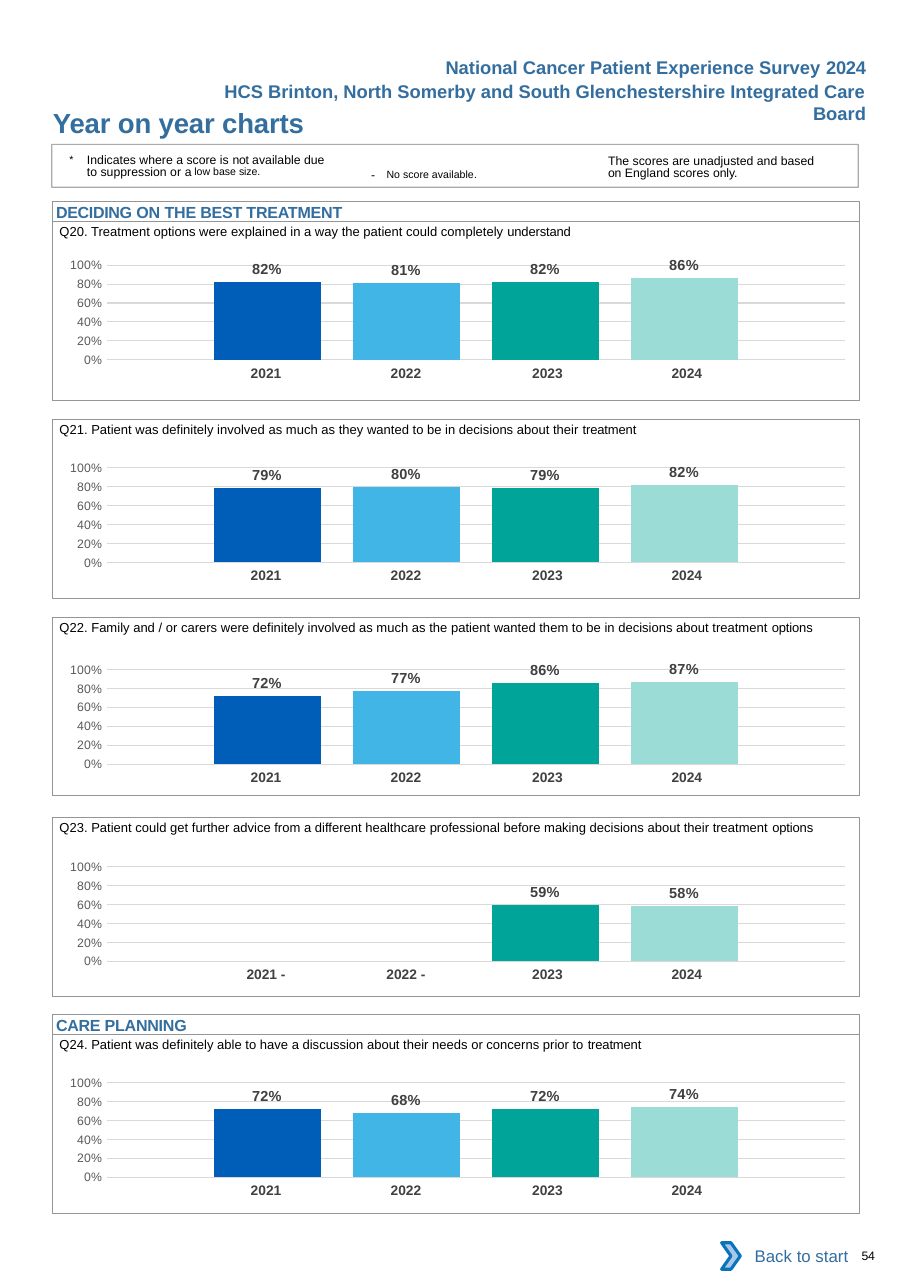
import pptx
import pptx.util
import pptx.chart.data
import pptx.dml.color
import pptx.enum.chart
import pptx.enum.shapes
import pptx.enum.text
import pptx.oxml
import pptx.oxml.ns
from pptx.util import Inches, Pt

# Content: frame top, chart top, question, its last word, scores
YEARS = (2021, 2022, 2023, 2024)
CHARTS = [
    (2.01, 2.22, "Q20. Treatment options were explained in a way the patient could completely ",
     "understand", (0.82, 0.81, 0.82, 0.86)),
    (3.81, 4.06, "Q21. Patient was definitely involved as much as they wanted to be in decisions about their ",
     "treatment", (0.79, 0.8, 0.79, 0.82)),
    (5.6, 5.89, "Q22. Family and / or carers were definitely involved as much as the patient wanted them "
     "to be in decisions about treatment ", "options", (0.72, 0.77, 0.86, 0.87)),
    (7.42, 7.68, "Q23. Patient could get further advice from a different healthcare professional before "
     "making decisions about their treatment ", "options", (None, None, 0.59, 0.58)),
    (9.39, 9.64, "Q24. Patient was definitely able to have a discussion about their needs or concerns prior to ",
     "treatment", (0.72, 0.68, 0.72, 0.74)),
]
# Runs: text, size, letter spacing, raised by percent
HEADS = [
    (1.83, [("DECIDING ", 10.5, -0.2), ("ON ", 10.5), ("THE BEST TREATMENT", 10.5, -0.1)]),
    (9.21, [("CARE ", 10.5, -0.2), ("PLANNING", 10.5, -0.1)]),
]
TITLE = [("Year on year charts", 18, -0.1)]
SURVEY = [("National Cancer Patient Experience Survey ", 12), ("2024", 12, -0.2)]
BOARD = [("HCS Brinton, North Somerby and South Glenchestershire Integrated Care Board", 12)]
STAR = [("*\t", 12, 0, 3), ("Indicates where a score is ", 8), ("not ", 8, -0.2),
        ("available due to suppression or ", 8), ("a ", 8, -0.5),
        ("low base", 12, 0, 7), (" size.", 12, -0.1, 7)]
DASH = [("- ", 8, 2.6), ("No score available", 12, 0, 3), (".", 12, -0.1, 3)]
SCORES = [("The scores are unadjusted and based", 8), (" on", 8, -0.2),
          (" England scores ", 8), ("only.", 8, -0.1)]

COLORS = {"head": "336E9F", "text": "000000", "frame": "939598", "year": "414042",
          "label": "404040", "axis": "595959", "grid": "D9D9D9", "white": "FFFFFF",
          "arrow": "A8C7E9", "edge": "0A74BB"}
BARS = ("005EB8", "41B6E6", "00A499", "9CDCD7")
LEFT, WIDE, TALL = 0.48, 7.32, 1.62
COLS = (1.27, 1.27, 1.34, 1.27)
PADS = (0, 0, 0.04, 0.12)
PLAIN = "{2D5ABB26-0587-4C30-8999-92F81FD0307C}"

ALIGN = pptx.enum.text.PP_ALIGN
ANCHOR = pptx.enum.text.MSO_ANCHOR
SHAPE = pptx.enum.shapes.MSO_SHAPE
XL = pptx.enum.chart


def rgb(name):
    return pptx.dml.color.RGBColor.from_string(COLORS.get(name, name))


def style(font, size, color, bold=False):
    font.name, font.size, font.bold = "Arial", Pt(size), bold
    font.color.rgb = rgb(color)


def write(frame, runs, color="text", bold=False, align=ALIGN.LEFT, pad=(0, 0, 0, 0),
          before=0, indent=0, hang=0, line=None, anchor=ANCHOR.TOP):
    frame.word_wrap = True
    frame.auto_size = pptx.enum.text.MSO_AUTO_SIZE.NONE
    frame.vertical_anchor = anchor
    (frame.margin_left, frame.margin_top,
     frame.margin_right, frame.margin_bottom) = map(Inches, pad)
    para = frame.paragraphs[0]
    para.alignment, para.space_before = align, Pt(before)
    if line:
        para.line_spacing = Pt(line)
    props = para._p.get_or_add_pPr()
    props.set("marL", str(Inches(indent)))
    props.set("indent", str(Inches(-hang)))
    for text, size, *more in runs:
        space, lift = (more + [0, 0])[:2]
        run = para.add_run()
        run.text = text
        style(run.font, size, color, bold)
        attrs = run._r.get_or_add_rPr()
        if space:
            attrs.set("spc", str(round(space * 100)))
        if lift:
            attrs.set("baseline", str(lift * 1000))


def label(box, runs, **how):
    write(slide.shapes.add_textbox(*map(Inches, box)).text_frame, runs, **how)


def block(kind, box, fill=None, line=None, width=0.5):
    shape = slide.shapes.add_shape(kind, *map(Inches, box))
    shape.shadow.inherit = False
    if fill:
        shape.fill.solid()
        shape.fill.fore_color.rgb = rgb(fill)
    else:
        shape.fill.background()
    if line:
        shape.line.color.rgb = rgb(line)
        shape.line.width = Pt(width)
    else:
        shape.line.fill.background()
    return shape


def draw_chart(top, vals):
    data = pptx.chart.data.CategoryChartData(number_format="0%")
    data.categories = ["1"]
    for n, val in enumerate(vals, 1):
        data.add_series(f"Series {n}", [val])
    chart = slide.shapes.add_chart(XL.XL_CHART_TYPE.COLUMN_CLUSTERED,
                                   *map(Inches, (0.39, top, WIDE, 1.29)), data).chart
    chart.has_legend = chart.has_title = False
    chart.font.name, chart.font.size = "Calibri", Pt(10)
    chart.font.color.rgb = rgb("text")
    chart.category_axis.visible = False
    axis = chart.value_axis
    axis.minimum_scale, axis.maximum_scale, axis.major_unit = 0, 1, 0.2
    axis.major_tick_mark = axis.minor_tick_mark = XL.XL_TICK_MARK.NONE
    axis.format.line.fill.background()
    axis.major_gridlines.format.line.color.rgb = rgb("grid")
    axis.major_gridlines.format.line.width = Pt(0.75)
    axis.tick_labels.number_format = "0%"
    axis.tick_labels.number_format_is_linked = False
    style(axis.tick_labels.font, 8, "axis")
    plot = chart.plots[0]
    plot.gap_width, plot.overlap, plot.vary_by_categories = 200, -30, False
    for bar, color in zip(plot.series, BARS):
        bar.format.fill.solid()
        bar.format.fill.fore_color.rgb = rgb(color)
        marks = bar.data_labels
        marks.show_value, marks.position = True, XL.XL_LABEL_POSITION.OUTSIDE_END
        marks.number_format, marks.number_format_is_linked = "0%", False
        style(marks.font, 9.5, "label", True)
    # Fixed inner plot area
    area = chart._chartSpace.chart.plotArea
    for old in area.findall(pptx.oxml.ns.qn("c:layout")):
        area.remove(old)
    parts = [("layoutTarget", "inner"), ("xMode", "edge"), ("yMode", "edge"),
             ("x", 0.079), ("y", 0.145), ("w", 0.915), ("h", 0.666)]
    inner = "".join(f'<c:{tag} val="{val}"/>' for tag, val in parts)
    area.insert(0, pptx.oxml.parse_xml(
        f'<c:layout {pptx.oxml.ns.nsdecls("c")}><c:manualLayout>{inner}</c:manualLayout></c:layout>'))


def draw_years(top, vals):
    table = slide.shapes.add_table(1, 4, *map(Inches, (1.73, top, sum(COLS), 0.27))).table
    table.first_row = table.horz_banding = False
    table._tbl.tblPr.find(pptx.oxml.ns.qn("a:tableStyleId")).text = PLAIN
    for n, (year, val) in enumerate(zip(YEARS, vals)):
        table.columns[n].width = Inches(COLS[n])
        cell = table.cell(0, n)
        cell.fill.background()
        cell.margin_left, cell.margin_right = Inches(0.1), Inches(PADS[n])
        para = cell.text_frame.paragraphs[0]
        para.alignment = ALIGN.CENTER
        run = para.add_run()
        run.text = f"{year} -" if val is None else str(year)
        style(run.font, 9, "year", True)


deck = pptx.Presentation()
deck.slide_width, deck.slide_height = Inches(8.26), Inches(11.69)
slide = deck.slides.add_slide(deck.slide_layouts[5])

# Title and page header
title = slide.shapes.title
title.left, title.top, title.width, title.height = map(Inches, (0.47, 0.96, 4.5, 0.3))
write(title.text_frame, TITLE, color="head", bold=True, before=4.1, indent=0.01)
head = dict(color="head", bold=True, align=ALIGN.RIGHT, pad=(0.1, 0.05, 0.1, 0.05))
label((1.73, 0.68, 6.23, 0.5), BOARD, **head)
label((3.72, 0.46, 4.24, 0.3), SURVEY, **head)

# Notes box
notes = block(SHAPE.RECTANGLE, (0.47, 1.31, WIDE, 0.39), line="frame", width=0.75)
tint = notes.line._ln.find(".//" + pptx.oxml.ns.qn("a:srgbClr"))
tint.append(pptx.oxml.parse_xml(f'<a:alpha {pptx.oxml.ns.nsdecls("a")} val="80000"/>'))
tight = dict(pad=(0, 0.03, 0, 0), before=2.5, line=8.1)
label((0.63, 1.38, 2.4, 0.3), STAR, indent=0.16, hang=0.16, **tight)
label((3.27, 1.41, 1.83, 0.24), DASH, pad=(0.1, 0.05, 0.1, 0.05), before=2.1)
label((5.52, 1.38, 2.01, 0.27), SCORES, **tight)

# Question panels
for top, start, ask, last, vals in CHARTS:
    draw_chart(start, vals)
    draw_years(start + 1.05, vals)
    block(SHAPE.RECTANGLE, (LEFT, top, WIDE, TALL), line="frame")
    label((0.54, top - 0.07, 7.26, 0.24), [(ask, 8.5), (last, 8.5, -0.1)],
          pad=(0, 0.09, 0, 0), before=6.8)

# Section headings
for top, runs in HEADS:
    bar = block(SHAPE.RECTANGLE, (LEFT, top, WIDE, 0.18), line="frame")
    write(bar.text_frame, runs, color="head", bold=True, pad=(0, 0.01, 0, 0),
          before=0.5, indent=0.03)

# Footer
back = block(SHAPE.RECTANGLE, (6.62, 11.19, 1.18, 0.42), fill="white")
write(back.text_frame, [("Back to start", 11)], color="head", align=ALIGN.RIGHT,
      pad=(0.1, 0.05, 0.1, 0.05), anchor=ANCHOR.MIDDLE)
block(SHAPE.CHEVRON, (6.55, 11.28, 0.17, 0.24), fill="arrow", line="edge", width=2)
label((7.72, 11.33, 0.51, 0.13), [("54", 8, -0.2)], before=0.2, indent=0.1)

deck.save("out.pptx")
